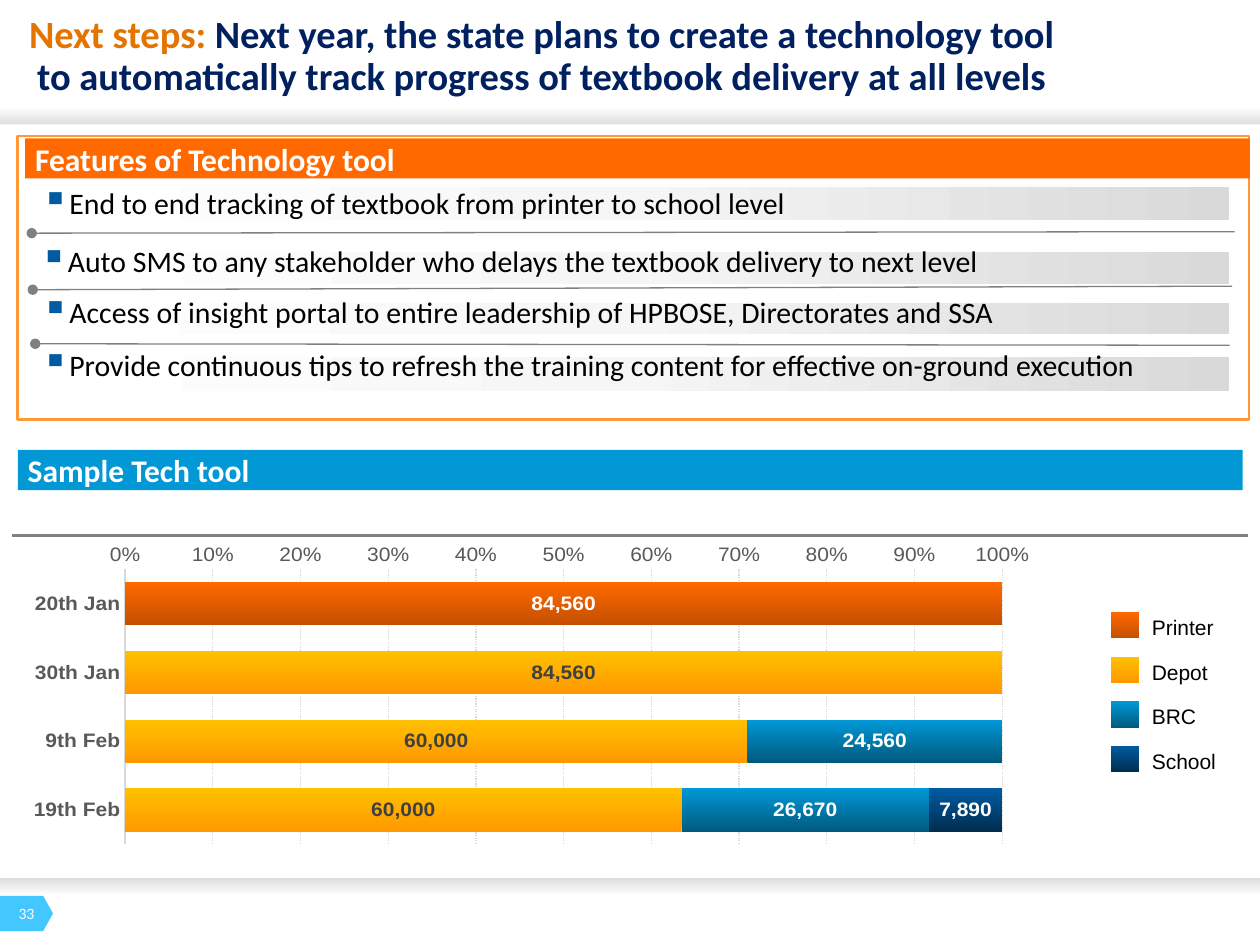
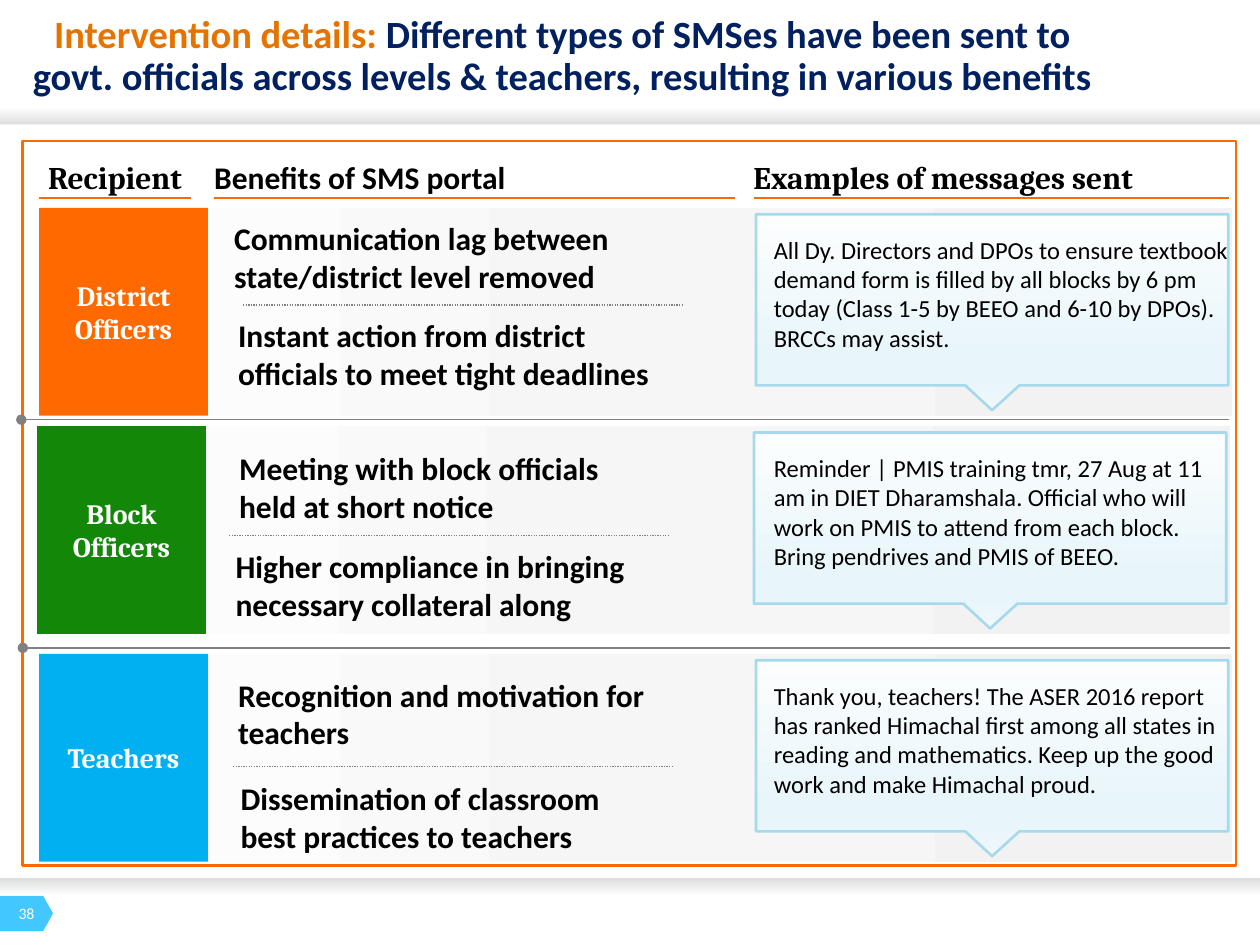
"""Build two slides on a textbook delivery tool and an SMS portal."""
from copy import deepcopy

from lxml import etree
from pptx import Presentation
from pptx import util as u
from pptx.chart import data as chart_data
from pptx.dml.color import RGBColor
from pptx.enum import chart as charts
from pptx.enum import dml, shapes, text
from pptx.oxml import ns

COLOURS = {
    "white": "FFFFFF", "black": "000000", "navy": "002060", "amber": "E57300",
    "orange": "FF6900", "frame": "FF9933", "blue": "0198D5", "sky": "00B0F0",
    "green": "138808", "tag": "42C7FE", "bullet": "005BA1", "rule": "808080",
    "shade": "A6A6A6", "mist": "F6F6F6", "silver": "D9D9D9", "pale": "F2F2F2",
    "axis": "595959", "label": "404040", "callout": "A7D9EC",
    "ice": "FCFEFE", "frost": "E8F5FA", "dew": "F0F8FC",
    "rust": "C44F00", "tangerine": "FF9900", "gold": "FFC000",
    "teal": "005A7F", "cyan": "0098D6", "midnight": "002D50",
}
EDGE = [(0, "white"), (0.99, "shade")]
ROW_SILVER = [(0, "white"), (0.5, "mist"), (1, "silver")]
ROW_PALE = [(0, "white"), (0.5, "mist"), (1, "pale")]
CALLOUT = [(0, "ice"), (0.74, "frost"), (0.83, "frost"), (1, "dew")]
CENTER = text.PP_ALIGN.CENTER
NO_INSET = (0, 0, 0, 0)
TILE_INSET = (0.25, 0.13, 0.25, 0.13)
BAR_INSET = (0.2, 0.2, 0.2, 0.2)

FEATURES = [
    (0.61, 3.78, 0.66, 0.84, 3.71, 24.33,
     "End to end tracking of textbook from printer to school level"),
    (0.66, 5.08, 0.64, 0.81, 4.88, 23.75,
     "Auto SMS to any stakeholder who delays the textbook delivery to next level"),
    (0.61, 6.1, 0.64, 0.84, 5.92, 23.75,
     "Access of insight portal to entire leadership of HPBOSE, Directorates and SSA"),
    (0.66, 7.19, 0.69, 0.84, 6.99, 23.75,
     "Provide continuous tips to refresh the training content for effective on-ground execution"),
]
FEATURE_RULES = [(0.64, 4.7, 24.89, 4.67), (0.66, 5.84, 24.84, 5.77),
                 (0.71, 6.93, 24.79, 6.96)]
DATES = ["20th Jan", "30th Jan", "9th Feb", "19th Feb"]
STAGES = [
    ("Printer", (84560, None, None, None), "rust", "orange", "white"),
    ("Depot", (None, 84560, 60000, 60000), "tangerine", "gold", "label"),
    ("BRC", (None, None, 24560, 26670), "teal", "cyan", "white"),
    ("School", (None, None, None, 7890), "midnight", "bullet", "white"),
]
HEADINGS = [("Benefits of SMS portal", 4.32, 10.5, "Calibri", None),
            ("Recipient", 0.79, 3.06, "Cambria", CENTER),
            ("Examples of messages sent", 15.19, 9.58, "Cambria", None)]
RECIPIENTS = [
    ("District Officers", "orange", 4.19, 0, 4.9,
     [(4.47, 4.29, 10.36, "Communication lag between state/district level removed"),
      (4.55, 6.25, 8.99, "Instant action from district officials to meet tight deadlines")],
     "All Dy. Directors and DPOs to ensure textbook demand form is filled by all "
     "blocks by 6 pm today (Class 1-5 by BEEO and 6-10 by DPOs). BRCCs may assist."),
    ("Block Officers", "green", 8.59, -0.04, 4.62,
     [(4.57, 8.92, 8.99, "Meeting with block officials held at short notice"),
      (4.5, 10.9, 8.99, "Higher compliance in bringing necessary collateral along")],
     "Reminder | PMIS training tmr, 27 Aug at 11 am in DIET Dharamshala. Official who "
     "will work on PMIS to attend from each block. Bring pendrives and PMIS of BEEO."),
    ("Teachers", "sky", 13.18, 0, 4.7,
     [(4.55, 13.49, 8.99, "Recognition and motivation for teachers"),
      (4.6, 15.57, 8.99, "Dissemination of classroom best practices to teachers")],
     "Thank you, teachers! The ASER 2016 report has ranked Himachal first among all "
     "states in reading and mathematics. Keep up the good work and make Himachal proud."),
]


def colour(name):
    """Return the named colour."""
    return RGBColor.from_string(COLOURS[name])


def set_gradient(fill, properties, stops, angle):
    """Fill with the given stops at a counter-clockwise angle."""
    fill.gradient()
    fill.gradient_angle = angle
    stop_list = properties.find(".//" + ns.qn("a:gsLst"))
    while len(stop_list) < len(stops):
        stop_list.append(deepcopy(stop_list[0]))
    for stop, (position, name) in zip(fill.gradient_stops, stops):
        stop.position = position
        stop.color.rgb = colour(name)


def set_font(font, size, name="black", bold=False, face="Calibri"):
    """Set every property of a font."""
    font.size, font.bold, font.name = u.Pt(size), bold, face
    font.color.rgb = colour(name)


class Deck:
    """Hold the presentation, its style and the current page."""

    def __init__(self):
        """Start an empty deck."""
        self.deck = Presentation()
        self.deck.slide_width, self.deck.slide_height = u.Cm(25.4), u.Cm(19.05)
        self.page = None

    def add_page(self, number):
        """Add a page with its edge bands and number tag."""
        self.page = self.deck.slides.add_slide(self.deck.slide_layouts[6])
        self.rect(0, 2.16, 25.4, 0.89, EDGE, angle=270)
        self.rect(0, 17.17, 25.4, 0.89, EDGE, angle=90)
        self.rect(0, 2.51, 25.4, 15.19, "white")
        tag = self.rect(0, 18.06, 1.07, 0.71, "tag", kind=shapes.MSO_SHAPE.PENTAGON)
        tag.adjustments[0] = 0.28
        self.words(0.33, 18.21, 0.41, 0.38, str(number), 9, "white", align=CENTER,
                   wrap=False)

    def title(self, width, lead, rest):
        """Add a centred title with a coloured lead."""
        box = self.words(0.25, 0.3, width, 1.7, lead, 22, "amber", True, align=CENTER)
        para = box.text_frame.paragraphs[0]
        para.line_spacing = 0.9
        span = para.add_run()
        span.text = rest
        span.font.color.rgb = colour("navy")

    def paint(self, shape, fill, line=None, angle=0):
        """Give a shape a plain or gradient fill and an optional outline."""
        shape.shadow.inherit = False
        if isinstance(fill, str):
            shape.fill.solid()
            shape.fill.fore_color.rgb = colour(fill)
        else:
            set_gradient(shape.fill, shape._element.spPr, fill, angle)
        if line:
            shape.line.color.rgb = colour(line)
            shape.line.width = u.Pt(1.5)
        else:
            shape.line.fill.background()

    def rect(self, left, top, width, height, fill, line=None, angle=0,
             kind=shapes.MSO_SHAPE.RECTANGLE):
        """Draw a preset shape."""
        shape = self.page.shapes.add_shape(
            kind, u.Cm(left), u.Cm(top), u.Cm(width), u.Cm(height))
        self.paint(shape, fill, line, angle)
        return shape

    def label(self, box, words, size, name="black", bold=False, face="Calibri",
              align=None, anchor=text.MSO_ANCHOR.MIDDLE, inset=NO_INSET, wrap=True,
              bullet=False):
        """Put one paragraph into a shape or box."""
        frame = box.text_frame
        frame.word_wrap, frame.vertical_anchor = wrap, anchor
        (frame.margin_left, frame.margin_top,
         frame.margin_right, frame.margin_bottom) = map(u.Cm, inset)
        para = frame.paragraphs[0]
        para.alignment = align or text.PP_ALIGN.LEFT
        if bullet:
            self.bullet(para)
        para.add_run().text = words
        set_font(para.font, size, name, bold, face)
        return box

    def words(self, left, top, width, height, *args, **style):
        """Place a text box."""
        box = self.page.shapes.add_textbox(
            u.Cm(left), u.Cm(top), u.Cm(width), u.Cm(height))
        return self.label(box, *args, **style)

    def bullet(self, para):
        """Give a paragraph a square bullet and hanging indent."""
        properties = para._p.get_or_add_pPr()
        properties.set("marL", str(u.Cm(0.53)))
        properties.set("indent", str(-u.Cm(0.53)))
        tint = etree.SubElement(properties, ns.qn("a:buClr"))
        etree.SubElement(tint, ns.qn("a:srgbClr"), val=COLOURS["bullet"])
        etree.SubElement(properties, ns.qn("a:buSzPct"), val="125000")
        etree.SubElement(properties, ns.qn("a:buChar"), char="▪")

    def bar(self, left, top, fill, words):
        """Draw a section bar with its heading."""
        shape = self.rect(left, top, 24.69, 0.81, fill)
        self.label(shape, words, 18, "white", True, inset=BAR_INSET)

    def rule(self, x1, y1, x2, y2, name="rule", width=0.75, dot=False, dash=False):
        """Draw a line, with a dot at its start or dashes if asked."""
        line = self.page.shapes.add_connector(
            shapes.MSO_CONNECTOR.STRAIGHT, u.Cm(x1), u.Cm(y1), u.Cm(x2), u.Cm(y2))
        line.line.color.rgb = colour(name)
        line.line.width = u.Pt(width)
        if dash:
            line.line.dash_style = dml.MSO_LINE.ROUND_DOT
        properties = line._element.spPr
        if dot:
            etree.SubElement(properties.find(ns.qn("a:ln")), ns.qn("a:headEnd"), type="oval")
        etree.SubElement(properties, ns.qn("a:effectLst"))

    def callout(self, left, top):
        """Draw a message bubble with a pointer below."""
        corners = [(9.52, 0), (9.52, 3.45), (5.31, 3.45), (4.76, 3.95),
                   (4.22, 3.45), (0, 3.45)]
        outline = self.page.shapes.build_freeform(u.Cm(left), u.Cm(top))
        outline.add_line_segments(
            [(u.Cm(left + x), u.Cm(top + y)) for x, y in corners], close=True)
        self.paint(outline.convert_to_shape(), CALLOUT, "callout", 270)

    def stage_chart(self):
        """Chart how many textbooks are at each stage by date."""
        figures = chart_data.CategoryChartData(number_format="#,##0")
        figures.categories = DATES
        for stage, values, *_ in STAGES:
            figures.add_series(stage, values)
        chart = self.page.shapes.add_chart(
            charts.XL_CHART_TYPE.BAR_STACKED_100, u.Cm(0.33), u.Cm(10.97),
            u.Cm(20.68), u.Cm(6.55), figures).chart
        chart.has_legend = chart.has_title = False
        set_font(chart.font, 10, face="Arial")
        plot = chart.plots[0]
        plot.gap_width, plot.overlap, plot.vary_by_categories = 60, 100, False
        for series, (_, _, dark, light, ink) in zip(plot.series, STAGES):
            set_gradient(series.format.fill, series._element, [(0, dark), (1, light)], 90)
            labels = series.data_labels
            labels.show_value = True
            labels.number_format, labels.number_format_is_linked = "#,##0", False
            set_font(labels.font, 12, ink, True, "Arial")
        dates, shares = chart.category_axis, chart.value_axis
        for axis in (dates, shares):
            axis.major_tick_mark = axis.minor_tick_mark = charts.XL_TICK_MARK.NONE
            set_font(axis.tick_labels.font, 12, "axis", axis is dates, "Arial")
        dates.reverse_order = True
        dates.crosses = charts.XL_AXIS_CROSSES.MAXIMUM
        dates.format.line.color.rgb = colour("silver")
        dates.format.line.width = u.Pt(1.5)
        shares.maximum_scale, shares.major_unit = 1, 0.1
        shares.tick_labels.number_format = "0%"
        shares.tick_labels.number_format_is_linked = False
        shares.format.line.fill.background()
        grid = shares.major_gridlines.format.line
        grid.color.rgb, grid.width = colour("silver"), u.Pt(0.75)
        grid.dash_style = dml.MSO_LINE.ROUND_DOT
        self.plot_layout(chart, x=0.106, y=0, w=0.855, h=0.918)

    def plot_layout(self, chart, **places):
        """Fix the inner plot area as shares of the chart."""
        area = chart._chartSpace.chart.plotArea
        for old in area.findall(ns.qn("c:layout")):
            area.remove(old)
        layout = etree.Element(ns.qn("c:layout"))
        area.insert(0, layout)
        manual = etree.SubElement(layout, ns.qn("c:manualLayout"))
        settings = {"layoutTarget": "inner", "xMode": "edge", "yMode": "edge", **places}
        for key, value in settings.items():
            etree.SubElement(manual, ns.qn("c:" + key), val=str(value))


def build_tool_page(deck):
    """Build the page on the technology tool."""
    deck.add_page(33)
    deck.title(21.34, "Next steps: ", "Next year, the state plans to create a technology "
               "tool to automatically track progress of textbook delivery at all levels")
    deck.rect(0.36, 2.74, 24.82, 5.72, "white", "frame")
    for band_left, band_top, height, left, top, width, words in FEATURES:
        deck.rect(band_left, band_top, 24.77 - band_left, height, ROW_SILVER)
        deck.words(left, top, width, 0.74, words, 17, bullet=True)
    for ends in FEATURE_RULES:
        deck.rule(*ends, dot=True)
    deck.stage_chart()
    for index, (stage, _, dark, light, _) in enumerate(STAGES):
        top = 12.34 + 0.9 * index
        deck.rect(22.4, top, 0.56, 0.53, [(0, dark), (1, light)], angle=90)
        box = deck.words(23.22, top, 1.3, 0.58, stage, 12, face="Arial", wrap=False,
                         anchor=text.MSO_ANCHOR.TOP)
        box.text_frame.paragraphs[0].line_spacing = 1.1
    deck.rule(0.25, 10.8, 25.15, 10.8, width=1.5)
    deck.bar(0.36, 9.07, "blue", "Sample Tech tool")
    deck.bar(0.51, 2.79, "orange", "Features of Technology tool")


def build_sms_page(deck):
    """Build the page on the SMS portal."""
    deck.add_page(38)
    deck.rect(0.46, 2.84, 24.46, 14.61, "white", "orange")
    deck.rule(0.46, 13.06, 24.79, 13.06, dot=True)
    deck.rule(0.43, 8.46, 24.77, 8.46, dot=True)
    deck.title(22.17, "Intervention details: ", "Different types of SMSes have been sent "
               "to govt. officials across levels & teachers, resulting in various benefits")
    for words, left, width, face, align in HEADINGS:
        deck.words(left, 3.18, width, 0.81, words, 18, bold=True, face=face, align=align,
                   anchor=text.MSO_ANCHOR.BOTTOM, inset=(0, 0, 0, 0.05))
        deck.rule(left, 3.99, left + width, 3.99, "orange", 1.5)
    for index, (name, fill, top, shift, dash_left, benefits, message) in enumerate(RECIPIENTS):
        deck.rect(0.86 + shift, top, 23.98, 4.19, ROW_PALE)
        tile = deck.rect(0.79 + shift, top, 3.4, 4.19, fill)
        deck.label(tile, name, 16, "white", True, "Cambria", CENTER, inset=TILE_INSET)
        dash_top = 6.15 + 4.65 * index
        deck.rule(dash_left, dash_top, dash_left + 8.86, dash_top, dash=True)
        for left, box_top, width, words in benefits:
            deck.words(left, box_top, width, 1.8, words, 18, bold=True,
                       anchor=text.MSO_ANCHOR.TOP, inset=TILE_INSET)
        deck.callout(15.24 + shift, top + 0.13)
        deck.words(15.6, top + 0.54, 9.17, 2.39, message, 14, anchor=text.MSO_ANCHOR.TOP)


def main():
    """Build and save the deck."""
    deck = Deck()
    build_tool_page(deck)
    build_sms_page(deck)
    deck.deck.save("out.pptx")


if __name__ == "__main__":
    main()
